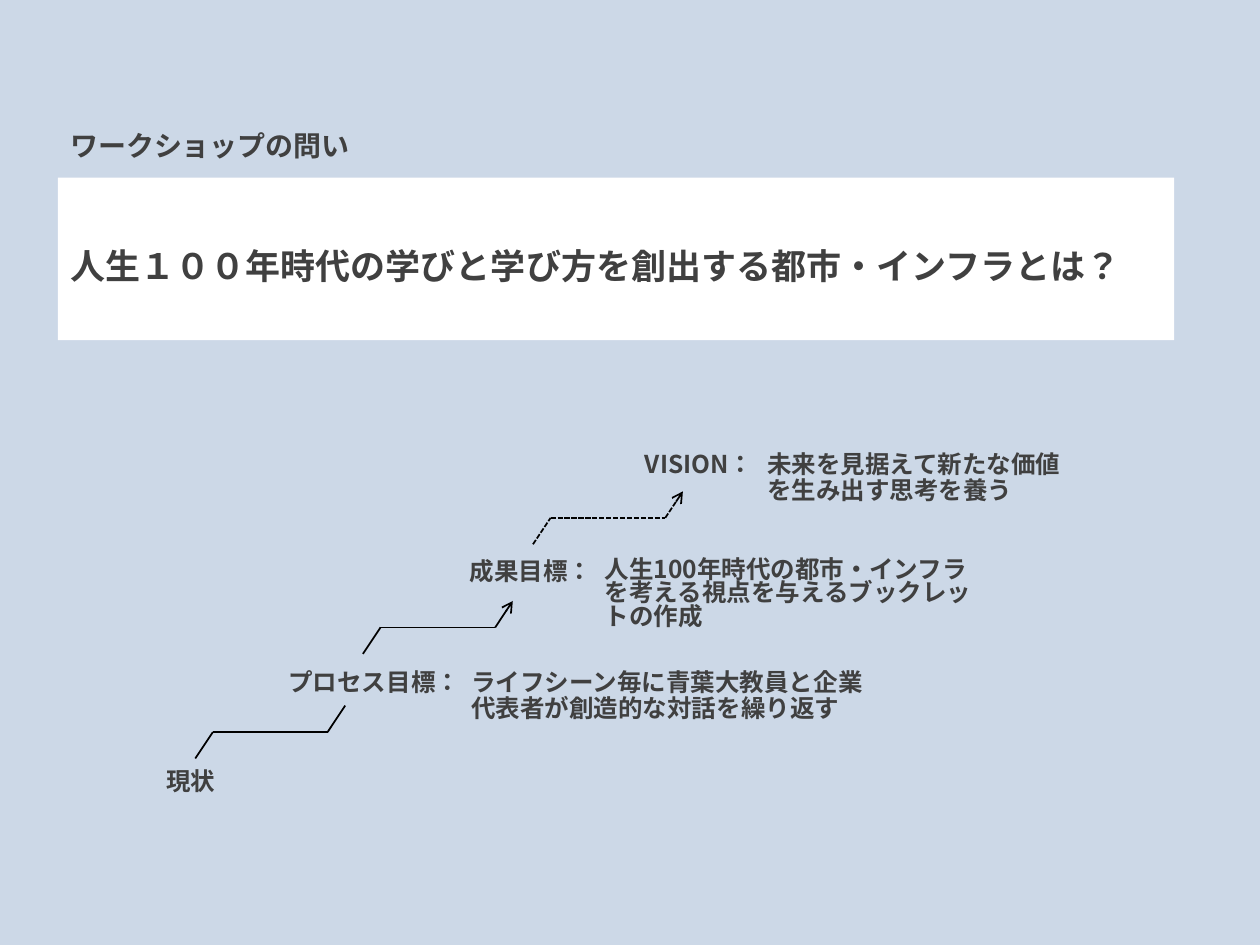
from lxml import etree
from pptx import Presentation
from pptx.dml.color import RGBColor
from pptx.enum import dml, lang, shapes, text
from pptx.oxml import ns
from pptx.util import Inches, Pt

BACKDROP = RGBColor(0xCC, 0xD8, 0xE7)
WHITE = RGBColor(0xFF, 0xFF, 0xFF)
INK = RGBColor(0x40, 0x40, 0x40)
BLACK = RGBColor(0, 0, 0)
FONT = "Noto Sans CJK JP"

STEP_RISE = 0.21
STEP_RUN = 0.14
STEP_TREAD = 0.91


def write(box, words, size=14, spacing=0.9, before=10, anchor=text.MSO_ANCHOR.TOP):
    frame = box.text_frame
    frame.word_wrap = True
    frame.vertical_anchor = anchor
    para = frame.paragraphs[0]
    para.alignment = text.PP_ALIGN.LEFT
    para.line_spacing = spacing
    para.space_before = Pt(before)
    span = para.add_run()
    span.text = words
    span.font.size = Pt(size)
    span.font.bold = True
    span.font.color.rgb = INK
    span.font.name = FONT
    span.font.language_id = lang.MSO_LANGUAGE_ID.JAPANESE
    east_asian = etree.SubElement(span.font._element, ns.qn("a:ea"))
    east_asian.set("typeface", FONT)


def add_label(page, words, left, top, width, height, **style):
    box = page.shapes.add_textbox(Inches(left), Inches(top), Inches(width), Inches(height))
    write(box, words, **style)


def add_question(page, left, top, width, height):
    heading_height = 0.48
    add_label(page, "ワークショップの問い", left, top, 5.89, heading_height,
              size=16, anchor=text.MSO_ANCHOR.MIDDLE)
    panel = page.shapes.add_shape(
        shapes.MSO_SHAPE.RECTANGLE, Inches(left), Inches(top + heading_height),
        Inches(width), Inches(height - heading_height))
    panel.shadow.inherit = False
    panel.fill.solid()
    panel.fill.fore_color.rgb = WHITE
    panel.line.fill.background()
    write(panel, "人生１００年時代の学びと学び方を創出する都市・インフラとは？",
          size=20, spacing=Pt(32), before=0, anchor=text.MSO_ANCHOR.MIDDLE)


def add_step(page, left, bottom, arrow=True, dashed=False):
    corners = [
        (left, bottom),
        (left + STEP_RUN, bottom - STEP_RISE),
        (left + STEP_RUN + STEP_TREAD, bottom - STEP_RISE),
        (left + 2 * STEP_RUN + STEP_TREAD, bottom - 2 * STEP_RISE),
    ]
    group = page.shapes.add_group_shape()
    for start, end in zip(corners, corners[1:]):
        segment = group.shapes.add_connector(
            shapes.MSO_CONNECTOR.STRAIGHT, *map(Inches, start + end))
        segment.line.color.rgb = BLACK
        segment.line.width = Pt(1)
        if dashed:
            segment.line.dash_style = dml.MSO_LINE.SQUARE_DOT
        etree.SubElement(segment._element.spPr, ns.qn("a:effectLst"))
    if arrow:
        tail = etree.SubElement(segment.line._get_or_add_ln(), ns.qn("a:tailEnd"))
        tail.set("type", "arrow")


def add_goal(page, left, top, name, name_width, goal, goal_offset, goal_width, spacing=0.9):
    add_label(page, name, left, top, name_width, 0.33)
    add_label(page, goal, left + goal_offset, top, goal_width, 0.67, spacing=spacing)


def add_staircase(page, left, top):
    add_goal(page, left + 3.8, top, "VISION：", 1.1,
             "未来を見据えて新たな価値を生み出す思考を養う", 0.97, 2.57)
    add_goal(page, left + 2.41, top + 0.85, "成果目標：", 1.31,
             "人生100年時代の都市・インフラを考える視点を与えるブックレットの作成",
             1.07, 3.12, spacing=0.8)
    add_goal(page, left + 0.97, top + 1.73, "プロセス目標：", 1.84,
             "ライフシーン毎に青葉大教員と企業代表者が創造的な対話を繰り返す", 1.45, 3.45)
    add_label(page, "現状", left, top + 2.52, 0.79, 0.33)
    add_step(page, left + 0.33, top + 2.48, arrow=False)
    add_step(page, left + 1.66, top + 1.65)
    add_step(page, left + 3.01, top + 0.78, dashed=True)


def main():
    deck = Presentation()
    deck.slide_width = Inches(10)
    deck.slide_height = Inches(7.5)
    page = deck.slides.add_slide(deck.slide_layouts[6])
    page.background.fill.solid()
    page.background.fill.fore_color.rgb = BACKDROP
    add_question(page, 0.46, 0.93, 8.86, 1.77)
    add_staircase(page, 1.22, 3.54)
    deck.save("out.pptx")


if __name__ == "__main__":
    main()
